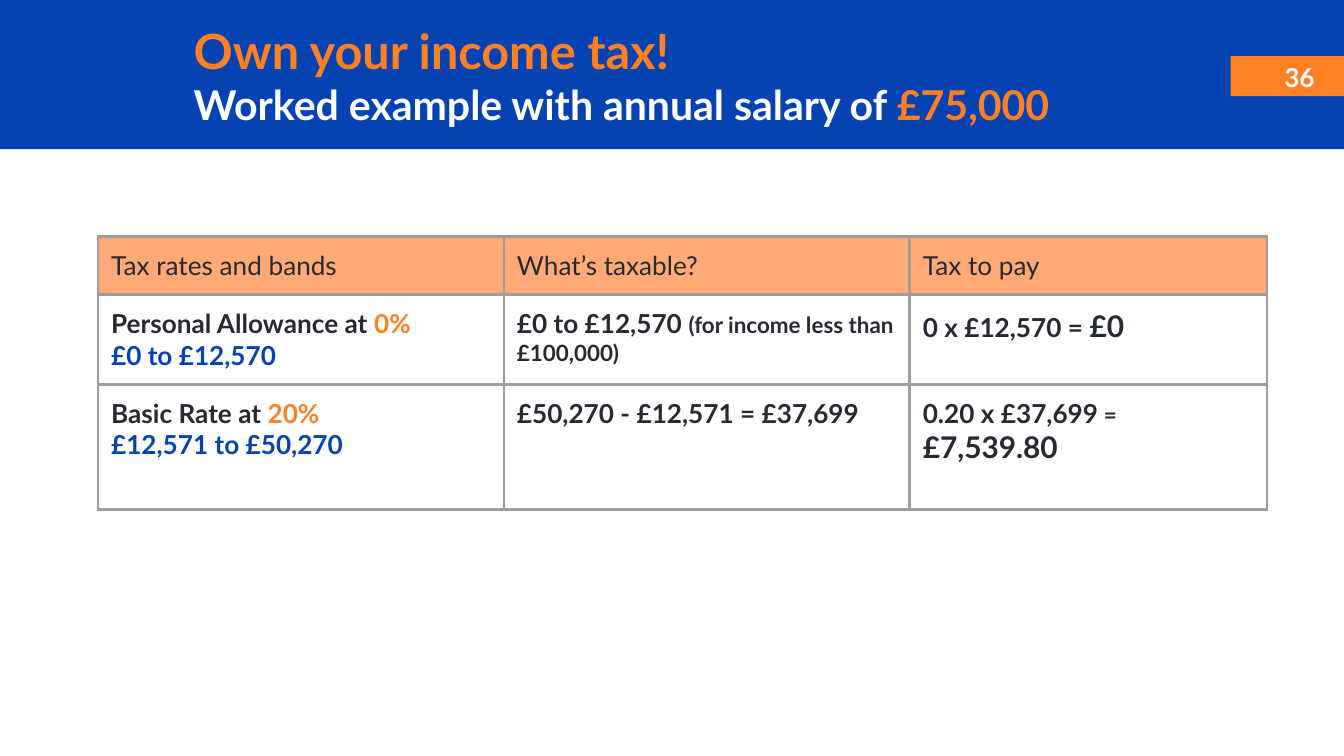
from lxml import etree
from pptx import Presentation
from pptx.dml.color import RGBColor
from pptx.enum.shapes import MSO_SHAPE
from pptx.enum.text import MSO_ANCHOR, PP_ALIGN
from pptx.oxml.ns import qn
from pptx.util import Cm, Pt

RECTANGLE = MSO_SHAPE.RECTANGLE
MIDDLE = MSO_ANCHOR.MIDDLE
LEFT, CENTER = PP_ALIGN.LEFT, PP_ALIGN.CENTER

BLUE, ORANGE, PEACH = "0543B3", "FF8022", "FFA976"
WHITE, INK, GREY = "FFFFFF", "262A33", "9E9E9E"


def color(code):
    return RGBColor.from_string(code)


def span(text, size=14, ink=INK, bold=True):
    """Pair a text with its format, ready for Page.fill_text."""
    return text, size, ink, bold


class Page:
    font = "Lato"
    inset = Cm(0.25)
    border_width = Pt(1.5)

    def __init__(self, deck):
        self.slide = deck.slides.add_slide(deck.slide_layouts[6])

    def fill_text(self, frame, paragraphs, align=LEFT):
        """Fill a text frame with paragraphs, each a list of spans."""
        for index, spans in enumerate(paragraphs):
            para = frame.paragraphs[0] if index == 0 else frame.add_paragraph()
            para.alignment = align
            for text, size, ink, bold in spans:
                run = para.add_run()
                run.text = text
                run.font.name = self.font
                run.font.size = Pt(size)
                run.font.bold = bold
                run.font.color.rgb = color(ink)

    def bar(self, left, top, width, height, fill):
        shape = self.slide.shapes.add_shape(
            RECTANGLE, Cm(left), Cm(top), Cm(width), Cm(height))
        shape.shadow.inherit = False
        shape.fill.solid()
        shape.fill.fore_color.rgb = color(fill)
        shape.line.fill.background()

    def text(self, left, top, width, height, paragraphs, align=LEFT):
        box = self.slide.shapes.add_textbox(
            Cm(left), Cm(top), Cm(width), Cm(height))
        frame = box.text_frame
        frame.word_wrap = True
        frame.vertical_anchor = MIDDLE
        frame.margin_left = frame.margin_right = self.inset
        frame.margin_top = frame.margin_bottom = self.inset
        self.fill_text(frame, paragraphs, align)

    def outline(self, cell):
        """Draw all four borders; they must precede the fill in the cell XML."""
        properties = cell._tc.get_or_add_tcPr()
        for side in ("lnL", "lnR", "lnT", "lnB"):
            line = etree.SubElement(
                properties, qn(f"a:{side}"), w=str(self.border_width))
            solid = etree.SubElement(line, qn("a:solidFill"))
            etree.SubElement(solid, qn("a:srgbClr"), val=GREY)

    def table(self, left, top, widths, heights, rows):
        table = self.slide.shapes.add_table(
            len(heights), len(widths), Cm(left), Cm(top),
            Cm(sum(widths)), Cm(sum(heights))).table
        table.horz_banding = False
        for column, width in zip(table.columns, widths):
            column.width = Cm(width)
        for row, height in zip(table.rows, heights):
            row.height = Cm(height)
        for row_index, contents in enumerate(rows):
            for column_index, paragraphs in enumerate(contents):
                cell = table.cell(row_index, column_index)
                cell.margin_left = cell.margin_right = self.inset
                cell.margin_top = cell.margin_bottom = self.inset
                self.outline(cell)
                if row_index == 0:
                    cell.fill.solid()
                    cell.fill.fore_color.rgb = color(PEACH)
                else:
                    cell.fill.background()
                self.fill_text(cell.text_frame, paragraphs)


def band(name, rate, limits):
    """First cell of a tax band: name and rate over its limits."""
    return [[span(f"{name} at "), span(rate, ink=ORANGE)],
            [span(limits, ink=BLUE)]]


def main():
    deck = Presentation()
    deck.slide_width, deck.slide_height = Cm(25.4), Cm(14.29)
    page = Page(deck)

    page.bar(0, 0, 25.4, 2.82, BLUE)
    page.bar(23.26, 1.06, 2.14, 0.76, ORANGE)
    page.text(23.9, 1.13, 1.32, 0.64, [[span("36", ink=WHITE)]], align=CENTER)
    page.text(3.41, 0.71, 17.53, 1.42, [
        [span("Own your income tax!", size=26, ink=ORANGE)],
        [span("Worked example with annual salary of ", size=22, ink=WHITE),
         span("£75,000", size=22, ink=ORANGE)],
    ])

    headings = ("Tax rates and bands", "What’s taxable?", "Tax to pay")
    page.table(1.85, 4.47, (7.67, 7.67, 6.75), (1.1, 1.7, 2.36), [
        [[[span(heading, bold=False)]] for heading in headings],
        [band("Personal Allowance", "0%", "£0 to £12,570"),
         [[span("£0 to £12,570 "),
           span("(for income less than £100,000)", size=12)]],
         [[span("0 x £12,570 = "), span("£0", size=16)]]],
        [band("Basic Rate", "20%", "£12,571 to £50,270"),
         [[span("£50,270 - £12,571 = £37,699")]],
         [[span("0.20 x £37,699"), span(" = ", size=12),
           span("£7,539.80", size=16)]]],
    ])
    deck.save("out.pptx")


if __name__ == "__main__":
    main()
